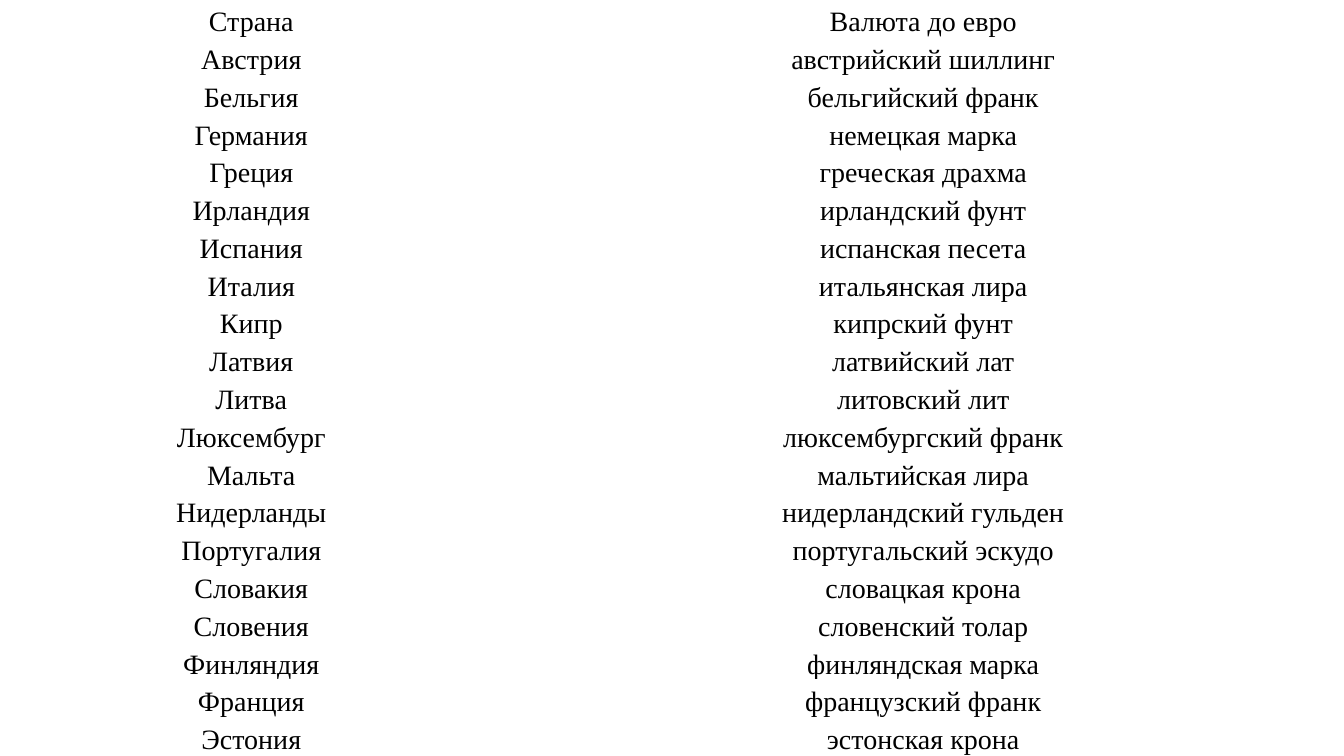
from pptx import Presentation
from pptx.dml.color import RGBColor
from pptx.enum.text import MSO_ANCHOR, PP_ALIGN
from pptx.util import Pt

BLACK = RGBColor(0x00, 0x00, 0x00)
CENTER = PP_ALIGN.CENTER
BOTTOM = MSO_ANCHOR.BOTTOM

WIDTH, HEIGHT = 960, 540
COUNTRY_WIDTH = 359

CURRENCIES = [
    ("Страна", "Валюта до евро"),
    ("Австрия", "австрийский шиллинг"),
    ("Бельгия", "бельгийский франк"),
    ("Германия", "немецкая марка"),
    ("Греция", "греческая драхма"),
    ("Ирландия", "ирландский фунт"),
    ("Испания", "испанская песета"),
    ("Италия", "итальянская лира"),
    ("Кипр", "кипрский фунт"),
    ("Латвия", "латвийский лат"),
    ("Литва", "литовский лит"),
    ("Люксембург", "люксембургский франк"),
    ("Мальта", "мальтийская лира"),
    ("Нидерланды", "нидерландский гульден"),
    ("Португалия", "португальский эскудо"),
    ("Словакия", "словацкая крона"),
    ("Словения", "словенский толар"),
    ("Финляндия", "финляндская марка"),
    ("Франция", "французский франк"),
    ("Эстония", "эстонская крона"),
]


def write(tf, text, font, size, color, align):
    p = tf.paragraphs[0]
    p.alignment = align
    r = p.add_run()
    r.text = text
    r.font.name = font
    r.font.size = Pt(size)
    r.font.bold = False
    r.font.color.rgb = color


class Deck:
    font = "Times New Roman"
    size = 20
    color = BLACK
    inset = 0.75

    def __init__(self, prs):
        self.s = prs.slides.add_slide(prs.slide_layouts[6])

    def table(self, rows, left, top, widths, height):
        shape = self.s.shapes.add_table(
            len(rows), len(widths), Pt(left), Pt(top), Pt(sum(widths)), Pt(height))
        table = shape.table
        table.first_row = False
        table.horz_banding = False
        for column, width in zip(table.columns, widths):
            column.width = Pt(width)
        for row, texts in zip(table.rows, rows):
            row.height = Pt(height / len(rows))
            for cell, text in zip(row.cells, texts):
                self.cell(cell, text)

    def cell(self, cell, text):
        cell.fill.background()
        cell.vertical_anchor = BOTTOM
        cell.margin_left = cell.margin_right = cell.margin_top = Pt(self.inset)
        cell.margin_bottom = 0
        write(cell.text_frame, text, font=self.font, size=self.size,
              color=self.color, align=CENTER)


def main():
    prs = Presentation()
    prs.slide_width, prs.slide_height = Pt(WIDTH), Pt(HEIGHT)
    deck = Deck(prs)
    deck.table(CURRENCIES, 0, 0, [COUNTRY_WIDTH, WIDTH - COUNTRY_WIDTH], HEIGHT)
    prs.save("out.pptx")


if __name__ == "__main__":
    main()
